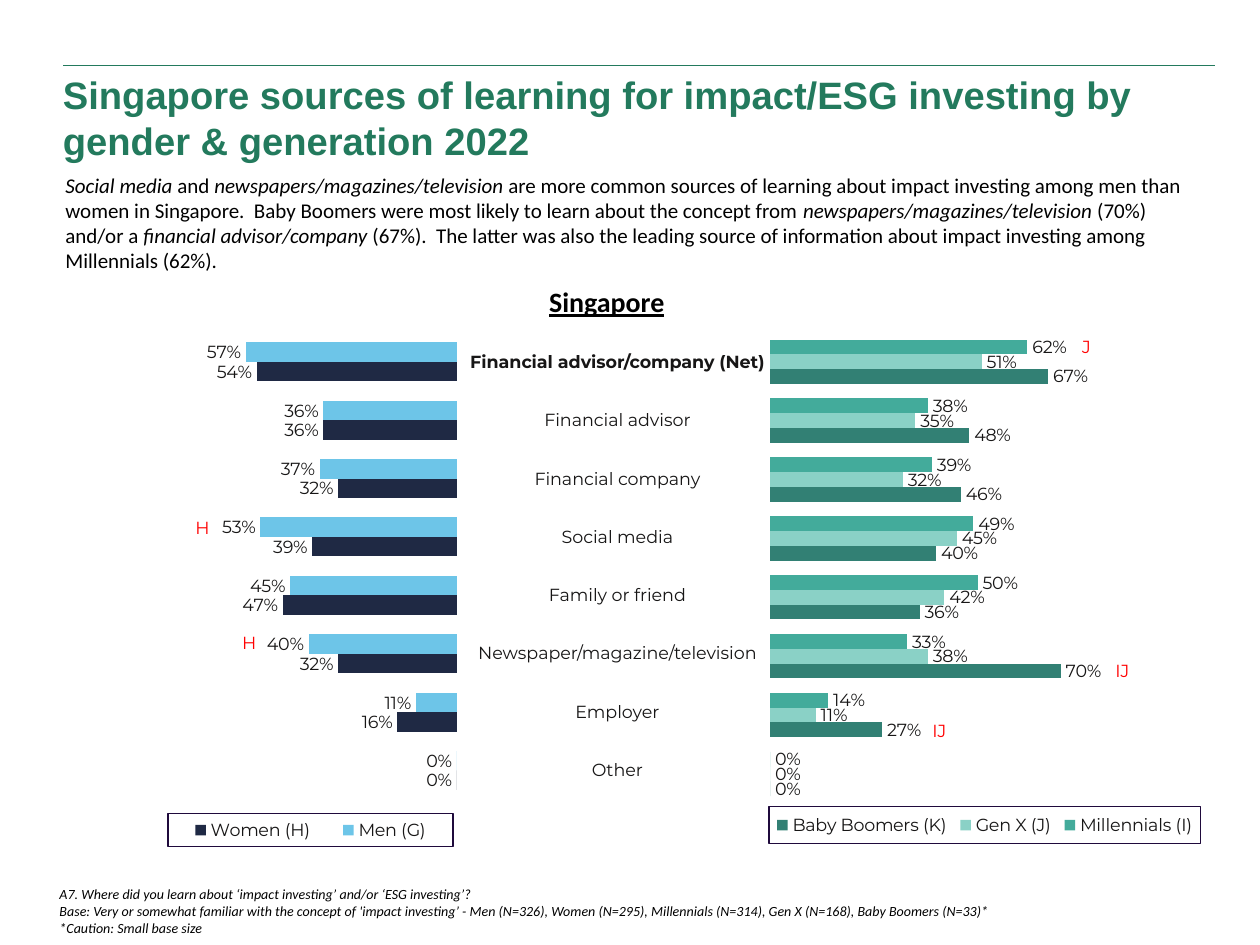
import pptx
import pptx.chart.data
import pptx.dml.color
import pptx.enum.chart
import pptx.enum.shapes
import pptx.enum.text
import pptx.oxml
import pptx.oxml.ns
import pptx.util
from pptx.util import Cm

COLORS = {
    "title": "237A5D", "black": "000000", "label": "171616", "flag": "FF0000",
    "men": "6DC5E8", "women": "1F2944", "millennials": "43AB9B",
    "gen_x": "8AD1C6", "boomers": "328074", "legend": "1F0A3C",
}
ALIGN = pptx.enum.text.PP_ALIGN
ANCHOR = pptx.enum.text.MSO_ANCHOR


def style_font(font, name, size, color, bold=False, italic=False):
    font.name = name
    font.size = pptx.util.Pt(size)
    font.bold = bold
    font.italic = italic
    font.color.rgb = pptx.dml.color.RGBColor.from_string(COLORS[color])


def add_text(left, top, width, height, text, name, size, color, bold=False, italic=False,
             wrap=True, align=ALIGN.LEFT):
    shape = slide.shapes.add_textbox(Cm(left), Cm(top), Cm(width), Cm(height))
    shape.text_frame.word_wrap = wrap
    shape.text_frame.text = text
    for paragraph in shape.text_frame.paragraphs:
        paragraph.alignment = align
        for run in paragraph.runs:
            style_font(run.font, name, size, color, bold, italic)
    return shape


presentation = pptx.Presentation()
presentation.slide_width = Cm(25.4)
presentation.slide_height = Cm(19.05)
slide = presentation.slides.add_slide(presentation.slide_layouts[6])

rule = slide.shapes.add_connector(
    pptx.enum.shapes.MSO_CONNECTOR.STRAIGHT, Cm(1.27), Cm(1.32), Cm(24.49), Cm(1.32))
rule.line.color.rgb = pptx.dml.color.RGBColor.from_string(COLORS["title"])
rule.line.width = pptx.util.Pt(0.5)
pptx.oxml.ns.qn("a:effectLst")
rule._element.spPr.append(pptx.oxml.parse_xml(
    '<a:effectLst xmlns:a="http://schemas.openxmlformats.org/drawingml/2006/main"/>'))

charts = [
    {
        "box": (0.97, 6.27, 8.33, 10.9), "reverse": True,
        "plot": (0.093, 0.04, 0.896, 0.864), "legend": (0.29, 0.93, 0.69, 0.06),
        "series": [
            ("Men (G)", "men", (0.57, 0.36, 0.37, 0.53, 0.45, 0.4, 0.11, 0)),
            ("Women (H)", "women", (0.54, 0.36, 0.32, 0.39, 0.47, 0.32, 0.16, 0)),
        ],
    },
    {
        "box": (13.87, 6.4, 10.54, 10.64), "reverse": False,
        "plot": (0.157, 0.028, 0.794, 0.893), "legend": (0.155, 0.927, 0.825, 0.07),
        "series": [
            ("Millennials (I)", "millennials", (0.62, 0.38, 0.39, 0.49, 0.5, 0.33, 0.14, 0)),
            ("Gen X (J)", "gen_x", (0.51, 0.35, 0.32, 0.45, 0.42, 0.38, 0.11, 0)),
            ("Baby Boomers (K)", "boomers", (0.67, 0.48, 0.46, 0.4, 0.36, 0.7, 0.27, 0)),
        ],
    },
]
for settings in charts:
    chart_data = pptx.chart.data.CategoryChartData(number_format="0%")
    chart_data.categories = [str(number) for number in range(1, 9)]
    for name, color, values in settings["series"]:
        chart_data.add_series(name, values)
    chart = slide.shapes.add_chart(
        pptx.enum.chart.XL_CHART_TYPE.BAR_CLUSTERED,
        *[Cm(length) for length in settings["box"]], chart_data).chart
    style_font(chart.font, "Montserrat", 10, "label")
    chart.has_title = False
    chart.category_axis.reverse_order = True
    chart.category_axis.visible = False
    chart.value_axis.reverse_order = settings["reverse"]
    chart.value_axis.minimum_scale = 0
    chart.value_axis.maximum_scale = 1
    chart.value_axis.has_major_gridlines = False
    chart.value_axis.visible = False

    plot = chart.plots[0]
    plot.gap_width = 100
    plot.overlap = 0
    plot.vary_by_categories = False
    for series, (name, color, values) in zip(plot.series, settings["series"]):
        series.format.fill.solid()
        series.format.fill.fore_color.rgb = pptx.dml.color.RGBColor.from_string(COLORS[color])
        labels = series.data_labels
        labels.show_value = True
        labels.number_format = "0%"
        labels.number_format_is_linked = False
        labels.position = pptx.enum.chart.XL_LABEL_POSITION.OUTSIDE_END
        style_font(labels.font, "Montserrat", 10, "label")

    chart.has_legend = True
    chart.legend.position = pptx.enum.chart.XL_LEGEND_POSITION.RIGHT
    chart.legend.include_in_layout = False
    style_font(chart.legend.font, "Montserrat", 10, "label")
    namespaces = pptx.oxml.ns.nsdecls("c", "a")
    plot_area = chart._chartSpace.chart.plotArea
    legend = chart.legend._element
    for parent, key, target in ((plot_area, "plot", '<c:layoutTarget val="inner"/>'),
                                (legend, "legend", "")):
        for old_layout in parent.findall(pptx.oxml.ns.qn("c:layout")):
            parent.remove(old_layout)
        x, y, width, height = settings[key]
        layout = pptx.oxml.parse_xml(
            f'<c:layout {namespaces}><c:manualLayout>{target}'
            f'<c:xMode val="edge"/><c:yMode val="edge"/><c:x val="{x}"/><c:y val="{y}"/>'
            f'<c:w val="{width}"/><c:h val="{height}"/></c:manualLayout></c:layout>')
        parent.insert(0 if key == "plot" else 1, layout)
    legend.find(pptx.oxml.ns.qn("c:overlay")).addnext(pptx.oxml.parse_xml(
        f'<c:spPr {namespaces}><a:ln w="9525"><a:solidFill>'
        f'<a:srgbClr val="{COLORS["legend"]}"/></a:solidFill></a:ln></c:spPr>'))

sources = [
    "Financial advisor/company (Net)", "Financial advisor", "Financial company",
    "Social media", "Family or friend", "Newspaper/magazine/television", "Employer", "Other",
]
table = slide.shapes.add_table(len(sources), 1, Cm(8.61), Cm(6.7), Cm(7.67), Cm(9.4)).table
table.first_row = False
table.horz_banding = False
table._tbl.tblPr.find(pptx.oxml.ns.qn("a:tableStyleId")).text = (
    "{2D5ABB26-0587-4C30-8999-92F81FD0307C}")
for row, source in enumerate(sources):
    cell = table.cell(row, 0)
    cell.fill.background()
    cell.vertical_anchor = ANCHOR.MIDDLE
    cell.margin_left = cell.margin_right = cell.margin_top = Cm(0.03)
    cell.margin_bottom = 0
    cell.text_frame.text = source
    paragraph = cell.text_frame.paragraphs[0]
    paragraph.alignment = ALIGN.CENTER
    style_font(paragraph.runs[0].font, "Montserrat", 10, "label", bold=row == 0)

footnote = add_text(
    1.07, 17.91, 21.06, 1.09,
    "A7. Where did you learn about ‘impact investing’ and/or ‘ESG investing’?\n"
    "Base: Very or somewhat familiar with the concept of 'impact investing’ - Men (N=326), "
    "Women (N=295), Millennials (N=314), Gen X (N=168), Baby Boomers (N=33)*\n"
    "*Caution: Small base size", "Calibri", 8, "black", italic=True).text_frame
footnote.vertical_anchor = ANCHOR.BOTTOM
footnote.margin_left = footnote.margin_right = Cm(0.13)
footnote.margin_top = footnote.margin_bottom = Cm(0.13)

heading = add_text(10.8, 5.61, 2.87, 0.94, "Singapore", "Calibri", 16, "black",
                   bold=True, wrap=False, align=ALIGN.CENTER)
heading.text_frame.paragraphs[0].runs[0].font.underline = True
add_text(1.02, 1.32, 23.98, 2.11,
         "Singapore sources of learning for impact/ESG investing by gender & generation 2022",
         "Arial", 21.8, "title", bold=True)

summary = add_text(1.07, 3.35, 23.55, 2.31, "", "Calibri", 12, "black")
summary_parts = [
    "Social media ", "and ", "newspapers/magazines/television ",
    "are more common sources of learning about impact investing among men than women in "
    "Singapore.  Baby Boomers were most likely to learn about the concept from ",
    "newspapers/magazines/television ", "(70%) and/or a ", "financial advisor/company ",
    "(67%).  The latter was also the leading source of information about impact investing "
    "among Millennials (62%).",
]
for index, part in enumerate(summary_parts):
    run = summary.text_frame.paragraphs[0].add_run()
    run.text = part
    style_font(run.font, "Calibri", 12, "black", italic=index % 2 == 0)

flags = [("J", 21.56, 6.65, 0.69), ("H", 4.62, 12.62, 0.81), ("H", 3.68, 10.29, 0.81),
         ("IJ", 22.23, 13.18, 0.79), ("IJ", 18.54, 14.38, 0.79)]
for letters, left, top, width in flags:
    add_text(left, top, width, 0.69, letters, "Montserrat", 10, "flag",
             wrap=False, align=ALIGN.CENTER)

presentation.save("out.pptx")
